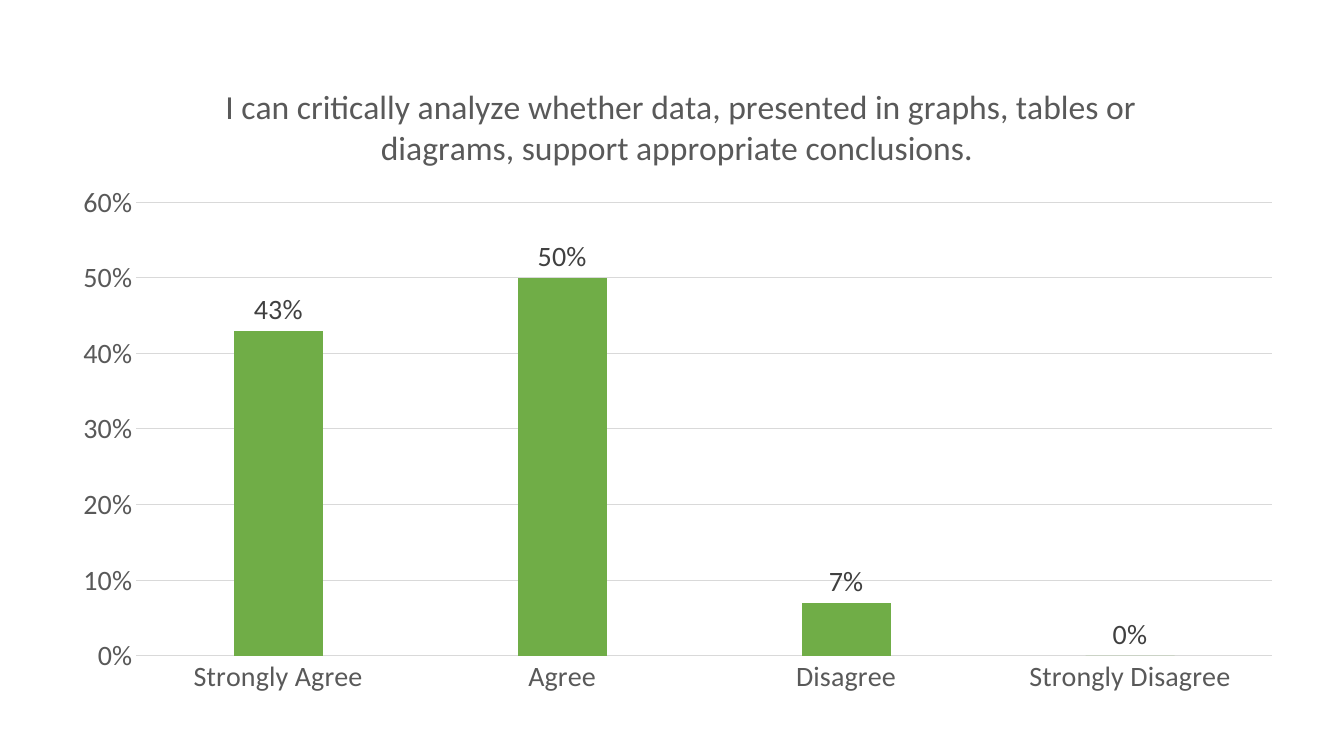
from lxml import etree
from pptx import Presentation
from pptx.chart.data import CategoryChartData as Data
from pptx.dml.color import RGBColor
from pptx.enum.chart import XL_CHART_TYPE as Kind
from pptx.enum.chart import XL_LABEL_POSITION as Spot
from pptx.enum.chart import XL_TICK_MARK as Tick
from pptx.oxml.ns import qn
from pptx.util import Inches, Pt

WIDE, HIGH = Inches(13.33), Inches(7.5)
GREY, PALE, DARK, GREEN = "595959", "D9D9D9", "404040", "70AD47"
TITLE = ("I can critically analyze whether data, presented in graphs, "
         "tables or diagrams, support appropriate conclusions. ")
SHARES = {"Strongly Agree": 0.43, "Agree": 0.5,
          "Disagree": 0.07, "Strongly Disagree": 0}


def color(code):
    return RGBColor.from_string(code)


def assign(item, values):
    for name, value in values.items():
        setattr(item, name, value)


def style(font, size, code):
    assign(font, {"name": "Calibri", "size": Pt(size), "bold": False})
    font.color.rgb = color(code)


def rule(line):
    line.color.rgb = color(PALE)
    line.width = Pt(0.75)


def arrange(part, index, values):
    """Fix a chart part at shares of the chart's size."""
    for old in part.findall(qn("c:layout")):
        part.remove(old)
    layout = etree.Element(qn("c:layout"))
    part.insert(index, layout)
    manual = etree.SubElement(layout, qn("c:manualLayout"))
    for tag, value in values.items():
        etree.SubElement(manual, qn("c:" + tag)).set("val", str(value))


def survey(slide, left, top, width, height):
    data = Data(number_format="0%")
    data.categories = list(SHARES)
    data.add_series("Series 1", list(SHARES.values()))
    chart = slide.shapes.add_chart(
        Kind.COLUMN_CLUSTERED, left, top, width, height, data).chart
    chart.has_legend = False
    style(chart.font, 20, GREY)

    # Title
    title = chart.chart_title
    title.include_in_layout = False
    title.text_frame.text = TITLE
    style(title.text_frame.paragraphs[0].runs[0].font, 24, GREY)
    edge = {"xMode": "edge", "yMode": "edge"}
    arrange(title._element, 1, {**edge, "x": 0.13, "y": 0.04})

    # Plot area
    area = chart._chartSpace.chart.plotArea
    arrange(area, 0, {"layoutTarget": "inner", **edge,
                      "x": 0.063, "y": 0.23, "w": 0.918, "h": 0.691})

    # Axes
    across, up = chart.category_axis, chart.value_axis
    for axis in (across, up):
        assign(axis, {"major_tick_mark": Tick.NONE,
                      "minor_tick_mark": Tick.NONE})
        style(axis.tick_labels.font, 20, GREY)
    rule(across.format.line)
    assign(up, {"minimum_scale": 0, "maximum_scale": 0.6,
                "major_unit": 0.1, "has_major_gridlines": True})
    up.format.line.fill.background()
    rule(up.major_gridlines.format.line)
    percent = {"number_format": "0%", "number_format_is_linked": False}
    assign(up.tick_labels, percent)

    # Bars and labels
    plot = chart.plots[0]
    assign(plot, {"gap_width": 219, "overlap": -27,
                  "vary_by_categories": False})
    bars = plot.series[0]
    bars.format.fill.solid()
    bars.format.fill.fore_color.rgb = color(GREEN)
    labels = bars.data_labels
    assign(labels, {**percent, "show_value": True,
                    "position": Spot.OUTSIDE_END})
    style(labels.font, 20, DARK)


def main():
    deck = Presentation()
    assign(deck, {"slide_width": WIDE, "slide_height": HIGH})
    slide = deck.slides.add_slide(deck.slide_layouts[6])
    survey(slide, Inches(0.58), Inches(0.51), Inches(12.27), Inches(6.51))
    deck.save("out.pptx")


if __name__ == "__main__":
    main()
